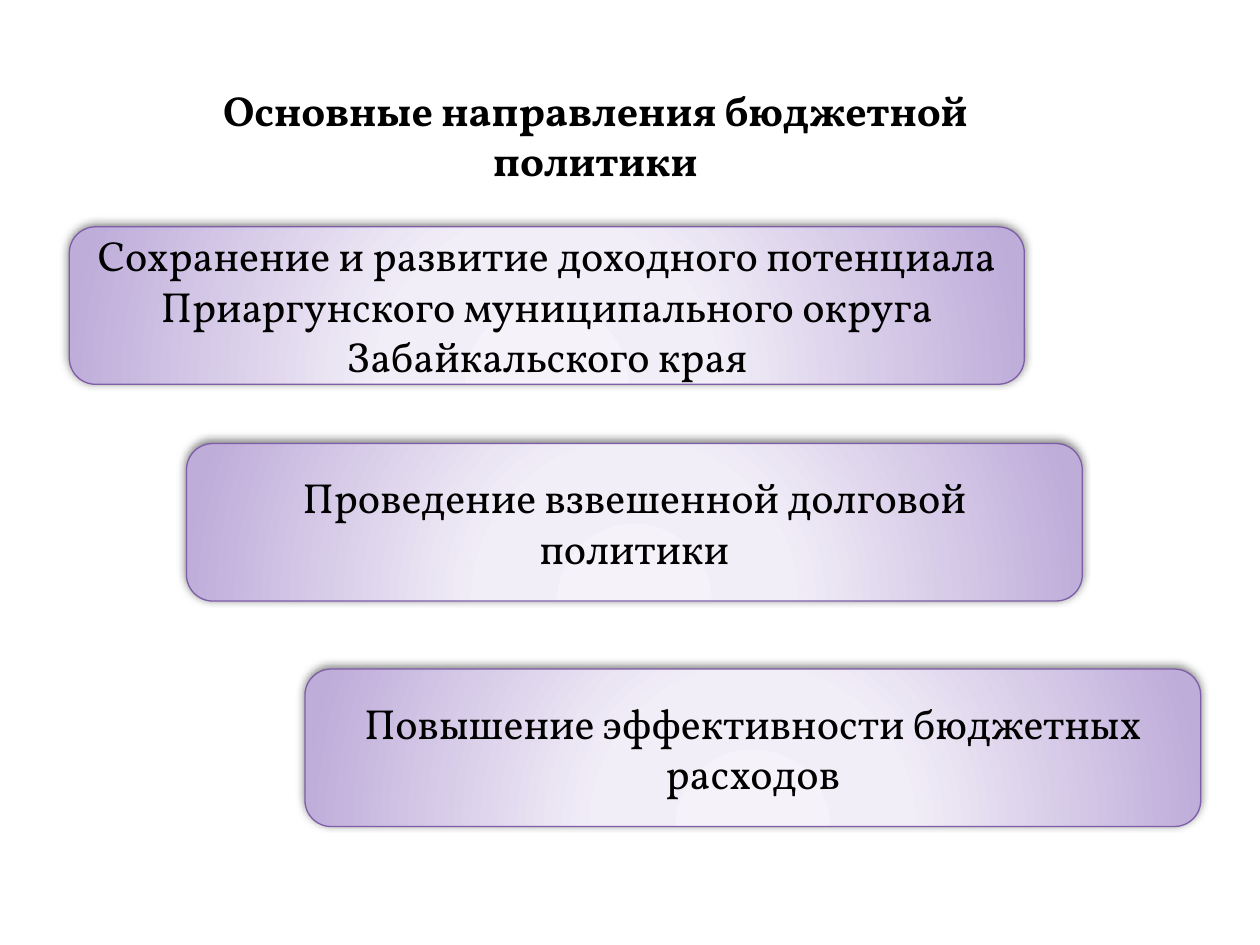
from pptx import Presentation
from pptx.dml.color import RGBColor
from pptx.enum.shapes import MSO_SHAPE as Shape
from pptx.enum.text import MSO_ANCHOR as Anchor, MSO_AUTO_SIZE as Fit, PP_ALIGN as Align
from pptx.oxml import parse_xml
from pptx.oxml.ns import nsdecls
from pptx.util import Inches, Pt

FONT = "Vollkorn"
BLACK = RGBColor(0x00, 0x00, 0x00)
EDGE = RGBColor(0x7F, 0x5E, 0xA8)
PALE = RGBColor(0xF5, 0xF2, 0xFA)
SOFT = RGBColor(0xF2, 0xEE, 0xF8)
LILAC = RGBColor(0xBE, 0xAC, 0xD9)
STOPS = [(0, PALE), (34, SOFT), (100, LILAC)]

TITLE = "Основные направления бюджетной политики"
CARDS = [
    (0.55, 1.8, 7.58, "Сохранение и развитие доходного потенциала "
     "Приаргунского муниципального округа Забайкальского края"),
    (1.48, 3.52, 7.11, "Проведение взвешенной долговой политики"),
    (2.42, 5.31, 7.11, "Повышение эффективности бюджетных расходов"),
]
HEIGHT = 1.25


def write(shape, text, anchor, bold=False):
    frame = shape.text_frame
    frame.word_wrap = True
    frame.vertical_anchor = anchor
    frame.text = text
    para = frame.paragraphs[0]
    para.alignment = Align.CENTER
    font = para.font
    font.name, font.size, font.bold = FONT, Pt(24), bold
    font.color.rgb = BLACK


def add_title(slide):
    title = slide.shapes.title
    title.left, title.top = Inches(1.09), Inches(0.62)
    title.width, title.height = Inches(7.27), Inches(0.5)
    write(title, TITLE, Anchor.TOP, bold=True)
    title.text_frame.auto_size = Fit.SHAPE_TO_FIT_TEXT


def glow(shape):
    """Give the shape a radial gradient centred below it and a soft shadow."""
    stops = "".join(
        f'<a:gs pos="{pos * 1000}"><a:srgbClr val="{color}"/></a:gs>'
        for pos, color in STOPS)
    fill = parse_xml(
        f'<a:gradFill {nsdecls("a")} rotWithShape="1"><a:gsLst>{stops}</a:gsLst>'
        '<a:path path="circle">'
        '<a:fillToRect l="50000" t="155000" r="50000" b="-55000"/>'
        '</a:path></a:gradFill>')
    shadow = parse_xml(
        f'<a:effectLst {nsdecls("a")}>'
        f'<a:outerShdw blurRad="{Pt(5)}" dist="{Pt(2)}" dir="{245 * 60000}" '
        f'rotWithShape="0"><a:srgbClr val="{BLACK}"><a:alpha val="50000"/>'
        '</a:srgbClr></a:outerShdw></a:effectLst>')
    line = shape.line._get_or_add_ln()
    line.addprevious(fill)
    line.addnext(shadow)


def add_card(slide, left, top, width, text):
    card = slide.shapes.add_shape(
        Shape.ROUNDED_RECTANGLE, Inches(left), Inches(top),
        Inches(width), Inches(HEIGHT))
    card.line.color.rgb = EDGE
    card.line.width = Pt(0.75)
    glow(card)
    write(card, text, Anchor.MIDDLE)


def main():
    deck = Presentation()
    deck.slide_width, deck.slide_height = Inches(10), Inches(7.5)
    slide = deck.slides.add_slide(deck.slide_layouts[5])
    add_title(slide)
    for card in CARDS:
        add_card(slide, *card)
    deck.save("out.pptx")


if __name__ == "__main__":
    main()
